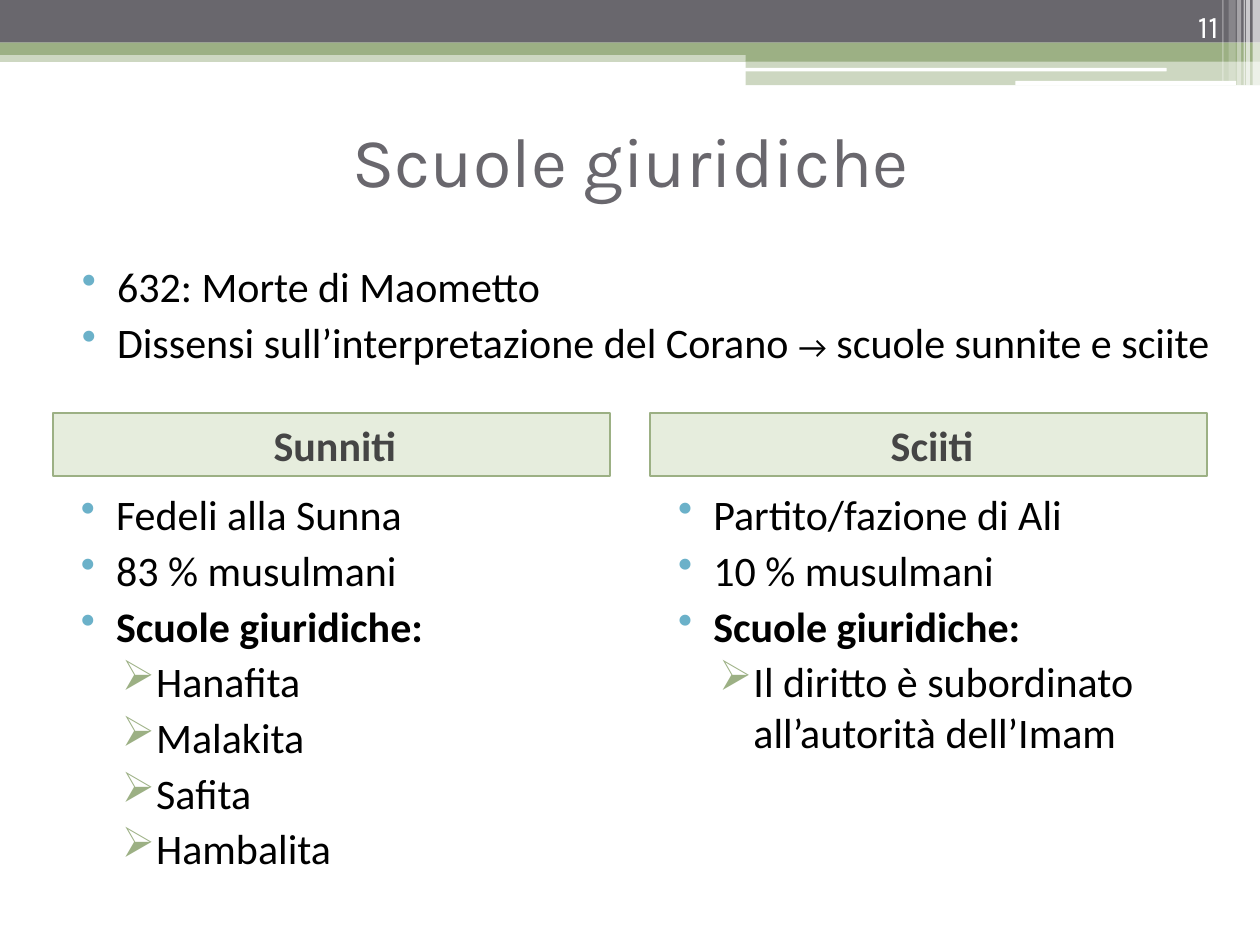
from dataclasses import dataclass

from lxml.etree import SubElement
from pptx import Presentation
from pptx.dml.color import RGBColor
from pptx.enum.shapes import MSO_SHAPE as Preset
from pptx.enum.text import MSO_ANCHOR as Anchor, PP_ALIGN as Align
from pptx.oxml.ns import qn
from pptx.util import Cm, Pt

COLORS = {
    "slate": "69676D",
    "green": "9CB084",
    "header": "9DBB79",
    "header_text": "454545",
    "blue": "6BB1C9",
    "black": "000000",
    "white": "FFFFFF",
}


@dataclass(frozen=True)
class Area:
    left: float
    top: float
    width: float
    height: float


@dataclass(frozen=True)
class Band:
    area: Area
    color: str
    opacity: int = 100
    preset: Preset = Preset.RECTANGLE


@dataclass(frozen=True)
class Bullet:
    symbol: str
    color: str
    level: int
    margin: float
    hanging: float


@dataclass(frozen=True)
class Span:
    text: str
    size: int = 24
    bold: bool = False


@dataclass(frozen=True)
class Item:
    spans: tuple[Span, ...]
    bullet: Bullet


@dataclass(frozen=True)
class Column:
    left: float
    heading: str
    facts: tuple[str, ...]
    schools: tuple[str, ...]


DOT = Bullet("•", "blue", 0, 1.02, 0.71)
ARROW = Bullet("➢", "green", 1, 1.83, 0.69)

BANDS = (
    Band(Area(0, 1.02, 25.4, 0.23), "green", 50),
    Band(Area(0, 0, 25.4, 0.86), "slate"),
    Band(Area(0, 0.86, 25.4, 0.25), "green"),
    Band(Area(15.03, 0.99, 10.37, 0.25), "green"),
    Band(Area(15.03, 1.22, 10.37, 0.5), "green", 50),
    Band(Area(15.01, 1.37, 8.51, 0.07), "white", preset=Preset.ROUNDED_RECTANGLE),
    Band(Area(20.47, 1.63, 4.45, 0.09), "white", preset=Preset.ROUNDED_RECTANGLE),
    Band(Area(25.25, 0, 0.15, 1.73), "white", 65),
    Band(Area(25.12, 0, 0.08, 1.73), "white", 65),
    Band(Area(25.07, 0, 0.03, 1.73), "white", 60),
    Band(Area(24.94, 0, 0.08, 1.73), "white", 40),
    Band(Area(24.77, 0, 0.14, 1.63), "white", 20),
    Band(Area(24.64, 0, 0.03, 1.63), "white", 30),
)

INTRO = (
    Item((Span("632: Morte di Maometto"),), DOT),
    Item(
        (
            Span("Dissensi sull’interpretazione del Corano "),
            Span("→", size=18),
            Span(" scuole sunnite e sciite"),
        ),
        DOT,
    ),
)

COLUMN_WIDTH = 11.23
COLUMNS = (
    Column(
        1.07,
        "Sunniti",
        ("Fedeli alla Sunna", "83 % musulmani"),
        ("Hanafita", "Malakita", "Safita", "Hambalita"),
    ),
    Column(
        13.11,
        "Sciiti",
        ("Partito/fazione di Ali", "10 % musulmani"),
        ("Il diritto è subordinato all’autorità dell’Imam",),
    ),
)


def rgb(color: str) -> RGBColor:
    return RGBColor.from_string(COLORS[color])


def lengths(area: Area) -> tuple[Cm, ...]:
    return Cm(area.left), Cm(area.top), Cm(area.width), Cm(area.height)


def add_band(slide, band: Band):
    shape = slide.shapes.add_shape(band.preset, *lengths(band.area))
    shape.shadow.inherit = False
    shape.fill.solid()
    shape.fill.fore_color.rgb = rgb(band.color)
    shape.line.fill.background()
    if band.opacity < 100:
        color = shape.fill._xPr.find(qn("a:solidFill"))[0]
        SubElement(color, qn("a:alpha"), val=str(band.opacity * 1000))
    return shape


def set_indent(para, margin: float, hanging: float = 0) -> None:
    properties = para._p.get_or_add_pPr()
    properties.set("marL", str(Cm(margin)))
    properties.set("indent", str(-Cm(hanging)))


def add_bullet(para, bullet: Bullet) -> None:
    para.level = bullet.level
    set_indent(para, bullet.margin, bullet.hanging)
    properties = para._p.get_or_add_pPr()
    color = SubElement(properties, qn("a:buClr"))
    SubElement(color, qn("a:srgbClr"), val=COLORS[bullet.color])
    SubElement(properties, qn("a:buChar"), char=bullet.symbol)


def add_span(para, text: str, *, size: int, color: str = "black",
             font: str = "Calibri", bold: bool = False) -> None:
    span = para.add_run()
    span.text = text
    span.font.name = font
    span.font.size = Pt(size)
    span.font.bold = bold
    span.font.color.rgb = rgb(color)


def add_box(slide, area: Area):
    box = slide.shapes.add_textbox(*lengths(area))
    box.text_frame.word_wrap = True
    return box


def add_label(slide, area: Area, text: str, *, align: Align, anchor: Anchor,
              **text_format) -> None:
    frame = add_box(slide, area).text_frame
    frame.vertical_anchor = anchor
    frame.paragraphs[0].alignment = align
    add_span(frame.paragraphs[0], text, **text_format)


def add_list(slide, area: Area, items: tuple[Item, ...]) -> None:
    frame = add_box(slide, area).text_frame
    for index, item in enumerate(items):
        para = frame.add_paragraph() if index else frame.paragraphs[0]
        add_bullet(para, item.bullet)
        if index:
            para.space_before = Pt(3)
        for span in item.spans:
            add_span(para, span.text, size=span.size, bold=span.bold)


def add_header(slide, column: Column) -> None:
    area = Area(column.left, 8.33, COLUMN_WIDTH, 1.27)
    header = add_band(slide, Band(area, "header", 25))
    header.line.color.rgb = rgb("green")
    header.line.width = Pt(1)
    header.text_frame.vertical_anchor = Anchor.MIDDLE
    para = header.text_frame.paragraphs[0]
    para.alignment = Align.CENTER
    set_indent(para, 0.13)
    add_span(para, column.heading, size=24, color="header_text", bold=True)


def add_column_list(slide, column: Column) -> None:
    facts = tuple(Item((Span(fact),), DOT) for fact in column.facts)
    subheading = Item((Span("Scuole giuridiche:", bold=True),), DOT)
    schools = tuple(Item((Span(school),), ARROW) for school in column.schools)
    area = Area(column.left, 9.73, COLUMN_WIDTH, 10.8)
    add_list(slide, area, (*facts, subheading, *schools))


def main() -> None:
    deck = Presentation()
    deck.slide_width, deck.slide_height = Cm(25.4), Cm(19.05)
    slide = deck.slides.add_slide(deck.slide_layouts[6])
    for band in BANDS:
        add_band(slide, band)
    add_label(slide, Area(1.07, 1.73, 23.29, 2.97), "Scuole giuridiche", size=40,
              font="Karla", color="slate", align=Align.CENTER, anchor=Anchor.MIDDLE)
    for draw in (add_header, add_column_list):
        for column in COLUMNS:
            draw(slide, column)
    add_label(slide, Area(22.71, 0, 2.11, 1.02), "11", size=18, font="Karla",
              color="white", align=Align.RIGHT, anchor=Anchor.BOTTOM)
    add_list(slide, Area(1.09, 5.13, 24.21, 2.41), INTRO)
    deck.save("out.pptx")


if __name__ == "__main__":
    main()
